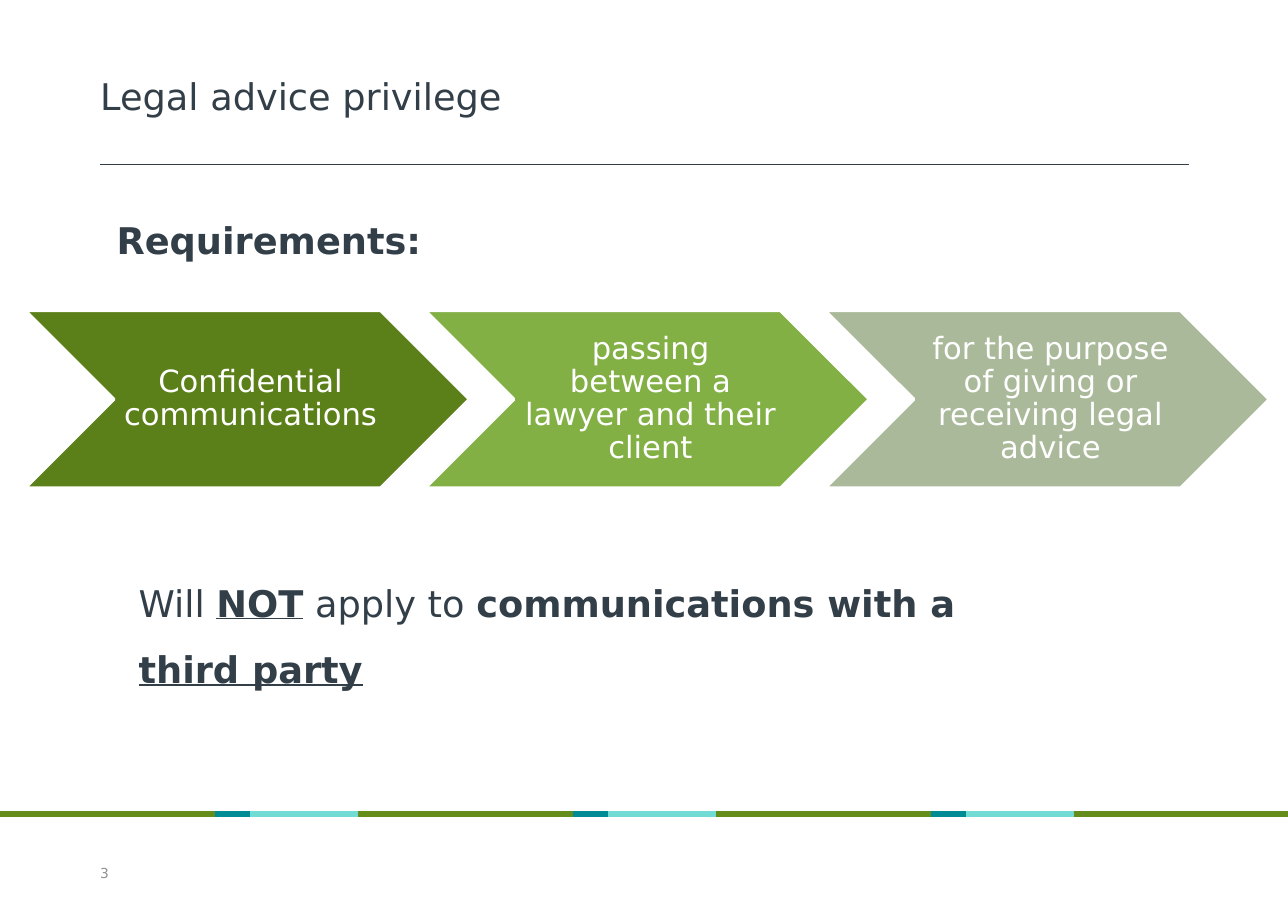
from lxml import etree
from pptx import Presentation
from pptx import util as u
from pptx.dml.color import RGBColor
from pptx.enum import shapes, text
from pptx.oxml import ns

PX = 9144
FONT = "DejaVu Sans"
COLORS = {
    "ink": "333F48",
    "grey": "909395",
    "white": "FFFFFF",
    "olive": "658D1B",
    "teal": "008C95",
    "aqua": "71DBD4",
    "moss": "5C8019",
    "leaf": "82B045",
    "sage": "A9B999",
}
REQUIREMENTS = [
    ("Confidential communications", "moss"),
    ("passing between a lawyer and their client", "leaf"),
    ("for the purpose of giving or receiving legal advice", "sage"),
]
STRIPE = [("olive", 195), ("teal", 32), ("aqua", 98)]
SLIDE_WIDTH, SLIDE_HEIGHT = 1169, 827


def px(*lengths):
    return [length * PX for length in lengths]


def color(name):
    return RGBColor.from_string(COLORS[name])


def add_span(para, words, size=24, ink="ink", bold=False, underline=False):
    span = para.add_run()
    span.text = words
    span.font.name = FONT
    span.font.size = u.Pt(size)
    span.font.bold = bold
    span.font.underline = underline
    span.font.color.rgb = color(ink)


def set_frame(frame, insets, anchor=text.MSO_ANCHOR.TOP, wrap=True):
    frame.word_wrap = wrap
    frame.vertical_anchor = anchor
    (frame.margin_left, frame.margin_top,
     frame.margin_right, frame.margin_bottom) = px(*insets)


def add_text(page, place, spans, insets=(10, 5, 10, 5), spacing=1.0, **frame_format):
    box = page.shapes.add_textbox(*px(*place))
    set_frame(box.text_frame, insets, **frame_format)
    para = box.text_frame.paragraphs[0]
    para.line_spacing = spacing
    for words, span_format in spans:
        add_span(para, words, **span_format)


def add_rule(page, left, right, top, ink, width):
    rule = page.shapes.add_connector(
        shapes.MSO_CONNECTOR.STRAIGHT, *px(left, top, right, top))
    rule.line.color.rgb = color(ink)
    rule.line.width = u.Pt(width)
    etree.SubElement(rule._element.spPr, ns.qn("a:effectLst"))


def add_stripe(page, top):
    left = 0
    while left < SLIDE_WIDTH:
        for ink, length in STRIPE:
            right = min(left + length, SLIDE_WIDTH)
            if right > left:
                add_rule(page, left, right, top, ink, 4)
            left = right


def add_chevron(page, place, words, fill):
    chevron = page.shapes.add_shape(shapes.MSO_SHAPE.CHEVRON, *px(*place))
    chevron.shadow.inherit = False
    chevron.fill.solid()
    chevron.fill.fore_color.rgb = color(fill)
    chevron.line.color.rgb = color("white")
    chevron.line.width = u.Pt(2)
    set_frame(chevron.text_frame, (9, 3, 3, 3), anchor=text.MSO_ANCHOR.MIDDLE)
    para = chevron.text_frame.paragraphs[0]
    para.alignment = text.PP_ALIGN.CENTER
    para.line_spacing = 0.9
    add_span(para, words, size=20, ink="white")


def main():
    deck = Presentation()
    deck.slide_width, deck.slide_height = px(SLIDE_WIDTH, SLIDE_HEIGHT)
    page = deck.slides.add_slide(deck.slide_layouts[6])

    add_stripe(page, 739)
    add_rule(page, 91, 1079, 149, "ink", 0.25)
    add_text(page, (91, 67, 988, 43), [("Legal advice privilege", {})],
             insets=(0, 0, 0, 0))
    add_text(page, (91, 772, 28, 28), [("3", {"size": 9, "ink": "grey"})],
             insets=(0, 0, 0, 0), anchor=text.MSO_ANCHOR.BOTTOM, wrap=False)

    add_text(page, (96, 193, 574, 50), [("Requirements:", {"bold": True})])
    for index, (words, fill) in enumerate(REQUIREMENTS):
        add_chevron(page, (23 + index * 363, 282, 403, 161), words, fill)

    add_text(page, (116, 502, 828, 123), [
        ("Will ", {}),
        ("NOT", {"bold": True, "underline": True}),
        (" apply to ", {}),
        ("communications with a ", {"bold": True}),
        ("third party", {"bold": True, "underline": True}),
    ], spacing=1.5)

    deck.save("out.pptx")


if __name__ == "__main__":
    main()
